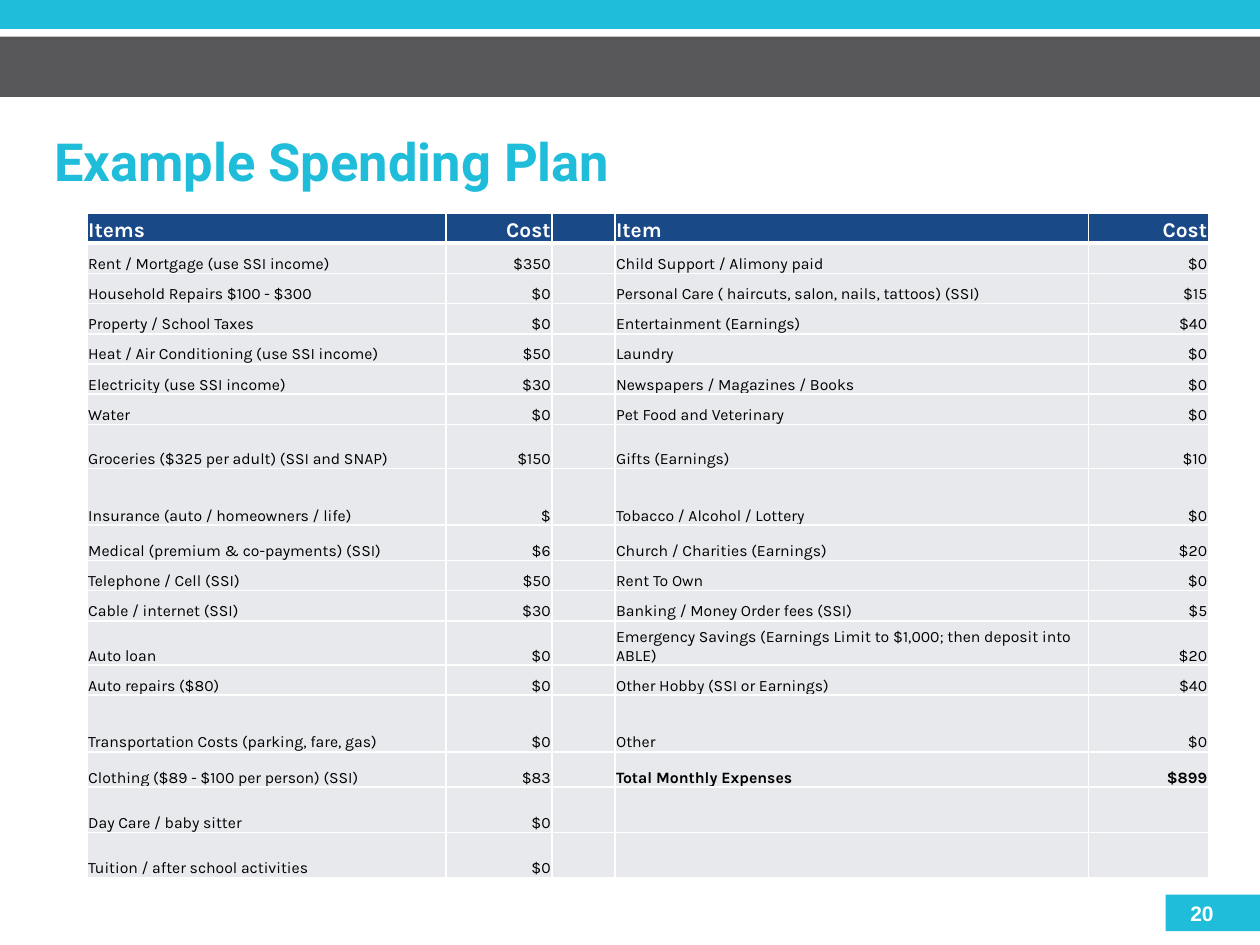
"""Build the example spending plan slide: title, two-sided budget table and page number."""
import dataclasses

import lxml.etree
import pptx
import pptx.dml.color
import pptx.enum.shapes
import pptx.enum.text
import pptx.oxml.ns
import pptx.util

Inches = pptx.util.Inches
Pt = pptx.util.Pt
Align = pptx.enum.text.PP_ALIGN
Anchor = pptx.enum.text.MSO_ANCHOR


@dataclasses.dataclass(frozen=True)
class Theme:
    """Colours, fonts and type sizes of the slide."""
    accent: str = "20BDDB"
    band: str = "575759"
    header: str = "1A4988"
    row: str = "E8E9ED"
    white: str = "FFFFFF"
    black: str = "000000"
    title_font: str = "Roboto"
    table_font: str = "Karla"
    number_font: str = "Arial"
    title_size: int = 30
    header_size: int = 12
    body_size: int = 9


THEME = Theme()
WIDTH, HEIGHT = 10, 7.5
TITLE = "Example Spending Plan"
PAGE_NUMBER = "20"
BARS = [
    ((0, 0, WIDTH, 0.23), THEME.accent),
    ((0, 0.29, WIDTH, 0.48), THEME.band),
    ((9.25, 7.1, 0.75, 0.29), THEME.accent),
]
COLUMN_WIDTHS = [2.85, 0.84, 0.5, 3.76, 0.95]
COST_COLUMNS = (1, 4)
BASE_ROW_HEIGHT = 0.24
TALL_ROWS = {7: 0.35, 8: 0.45, 9: 0.28, 12: 0.35, 14: 0.45, 15: 0.28, 16: 0.36, 17: 0.36}
TOTAL_LABEL = "Total Monthly Expenses"
LEFT_ITEMS = [
    ("Items", "Cost"),
    ("Rent / Mortgage (use SSI income)", "$350"),
    ("Household Repairs $100 - $300", "$0"),
    ("Property / School Taxes", "$0"),
    ("Heat / Air Conditioning (use SSI income)", "$50"),
    ("Electricity (use SSI income)", "$30"),
    ("Water", "$0"),
    ("Groceries ($325 per adult) (SSI and SNAP)", "$150"),
    ("Insurance (auto / homeowners / life)", "$"),
    ("Medical (premium & co-payments) (SSI)", "$6"),
    ("Telephone / Cell (SSI)", "$50"),
    ("Cable / internet (SSI)", "$30"),
    ("Auto loan", "$0"),
    ("Auto repairs ($80)", "$0"),
    ("Transportation Costs (parking, fare, gas)", "$0"),
    ("Clothing ($89 - $100 per person) (SSI)", "$83"),
    ("Day Care / baby sitter", "$0"),
    ("Tuition / after school activities", "$0"),
]
RIGHT_ITEMS = [
    ("Item", "Cost"),
    ("Child Support / Alimony paid", "$0"),
    ("Personal Care ( haircuts, salon, nails, tattoos) (SSI)", "$15"),
    ("Entertainment (Earnings)", "$40"),
    ("Laundry", "$0"),
    ("Newspapers / Magazines / Books", "$0"),
    ("Pet Food and Veterinary", "$0"),
    ("Gifts (Earnings)", "$10"),
    ("Tobacco / Alcohol / Lottery", "$0"),
    ("Church / Charities (Earnings)", "$20"),
    ("Rent To Own", "$0"),
    ("Banking / Money Order fees (SSI)", "$5"),
    ("Emergency Savings (Earnings Limit to $1,000; then deposit into ABLE)", "$20"),
    ("Other Hobby (SSI or Earnings)", "$40"),
    ("Other", "$0"),
    (TOTAL_LABEL, "$899"),
    ("", ""),
    ("", ""),
]


def rgb(value):
    """Turn a hex string into a colour."""
    return pptx.dml.color.RGBColor.from_string(value)


def add_run(paragraph, text, font, size, color, bold):
    """Append one formatted run to a paragraph."""
    run = paragraph.add_run()
    run.text = text
    run.font.name = font
    run.font.size = Pt(size)
    run.font.color.rgb = rgb(color)
    run.font.bold = bold


def add_bar(slide, box, color):
    """Draw one plain coloured rectangle."""
    shape = slide.shapes.add_shape(
        pptx.enum.shapes.MSO_SHAPE.RECTANGLE, *map(Inches, box))
    shape.shadow.inherit = False
    shape.fill.solid()
    shape.fill.fore_color.rgb = rgb(color)
    shape.line.fill.background()


def set_borders(cell, bottom_width):
    """Give a cell white borders with its own bottom width."""
    properties = cell._tc.get_or_add_tcPr()
    qualified = pptx.oxml.ns.qn
    widths = {"a:lnL": 1, "a:lnR": 1, "a:lnT": 1, "a:lnB": bottom_width}
    for index, (tag, width) in enumerate(widths.items()):
        line = lxml.etree.Element(qualified(tag), w=str(Pt(width)))
        fill = lxml.etree.SubElement(line, qualified("a:solidFill"))
        lxml.etree.SubElement(fill, qualified("a:srgbClr"), val=THEME.white)
        properties.insert(index, line)


def fill_cell(cell, text, is_header, is_cost, bold):
    """Format one table cell and write its text."""
    size = THEME.header_size if is_header else THEME.body_size
    cell.fill.solid()
    cell.fill.fore_color.rgb = rgb(THEME.header if is_header else THEME.row)
    set_borders(cell, 3 if is_header else 1)
    cell.margin_left = cell.margin_right = cell.margin_top = Inches(0.01)
    cell.margin_bottom = 0
    cell.vertical_anchor = Anchor.BOTTOM
    paragraph = cell.text_frame.paragraphs[0]
    paragraph.alignment = Align.RIGHT if is_cost else Align.LEFT
    if text:
        color = THEME.white if is_header else THEME.black
        add_run(paragraph, text, THEME.table_font, size, color, bold)
    else:
        end = lxml.etree.SubElement(paragraph._p, pptx.oxml.ns.qn("a:endParaRPr"))
        end.set("sz", str(size * 100))


def add_title(slide):
    """Place and format the title placeholder."""
    title = slide.shapes.title
    title.left, title.top, title.width, title.height = map(Inches, (0.33, 0.83, 8.42, 0.95))
    frame = title.text_frame
    frame.auto_size = pptx.enum.text.MSO_AUTO_SIZE.NONE
    frame.vertical_anchor = Anchor.MIDDLE
    paragraph = frame.paragraphs[0]
    paragraph.alignment = Align.LEFT
    paragraph.line_spacing = 0.9
    add_run(paragraph, TITLE, THEME.title_font, THEME.title_size, THEME.accent, True)


def add_budget(slide):
    """Build the spending table with a blank column between its two halves."""
    rows = [(*left, "", *right) for left, right in zip(LEFT_ITEMS, RIGHT_ITEMS)]
    heights = [TALL_ROWS.get(index, BASE_ROW_HEIGHT) for index in range(len(rows))]
    table = slide.shapes.add_table(
        len(rows), len(COLUMN_WIDTHS), Inches(0.69), Inches(1.69),
        Inches(sum(COLUMN_WIDTHS)), Inches(sum(heights))).table
    table.horz_banding = False
    for column, width in zip(table.columns, COLUMN_WIDTHS):
        column.width = Inches(width)
    for row_index, texts in enumerate(rows):
        table.rows[row_index].height = Inches(heights[row_index])
        is_header = row_index == 0
        for column_index, text in enumerate(texts):
            is_total = TOTAL_LABEL in texts and column_index >= 3
            fill_cell(table.cell(row_index, column_index), text, is_header,
                      column_index in COST_COLUMNS, is_header or is_total)


def add_page_number(slide):
    """Write the page number over its corner bar."""
    frame = slide.shapes.add_textbox(*map(Inches, (9.25, 7.1, 0.48, 0.29))).text_frame
    frame.word_wrap = True
    frame.vertical_anchor = Anchor.MIDDLE
    paragraph = frame.paragraphs[0]
    paragraph.alignment = Align.RIGHT
    add_run(paragraph, PAGE_NUMBER, THEME.number_font, THEME.header_size, THEME.white, True)


def main():
    """Assemble and save the presentation."""
    presentation = pptx.Presentation()
    presentation.slide_width, presentation.slide_height = Inches(WIDTH), Inches(HEIGHT)
    slide = presentation.slides.add_slide(presentation.slide_layouts[5])
    for box, color in BARS:
        add_bar(slide, box, color)
    add_title(slide)
    add_budget(slide)
    add_page_number(slide)
    presentation.save("out.pptx")


if __name__ == "__main__":
    main()
